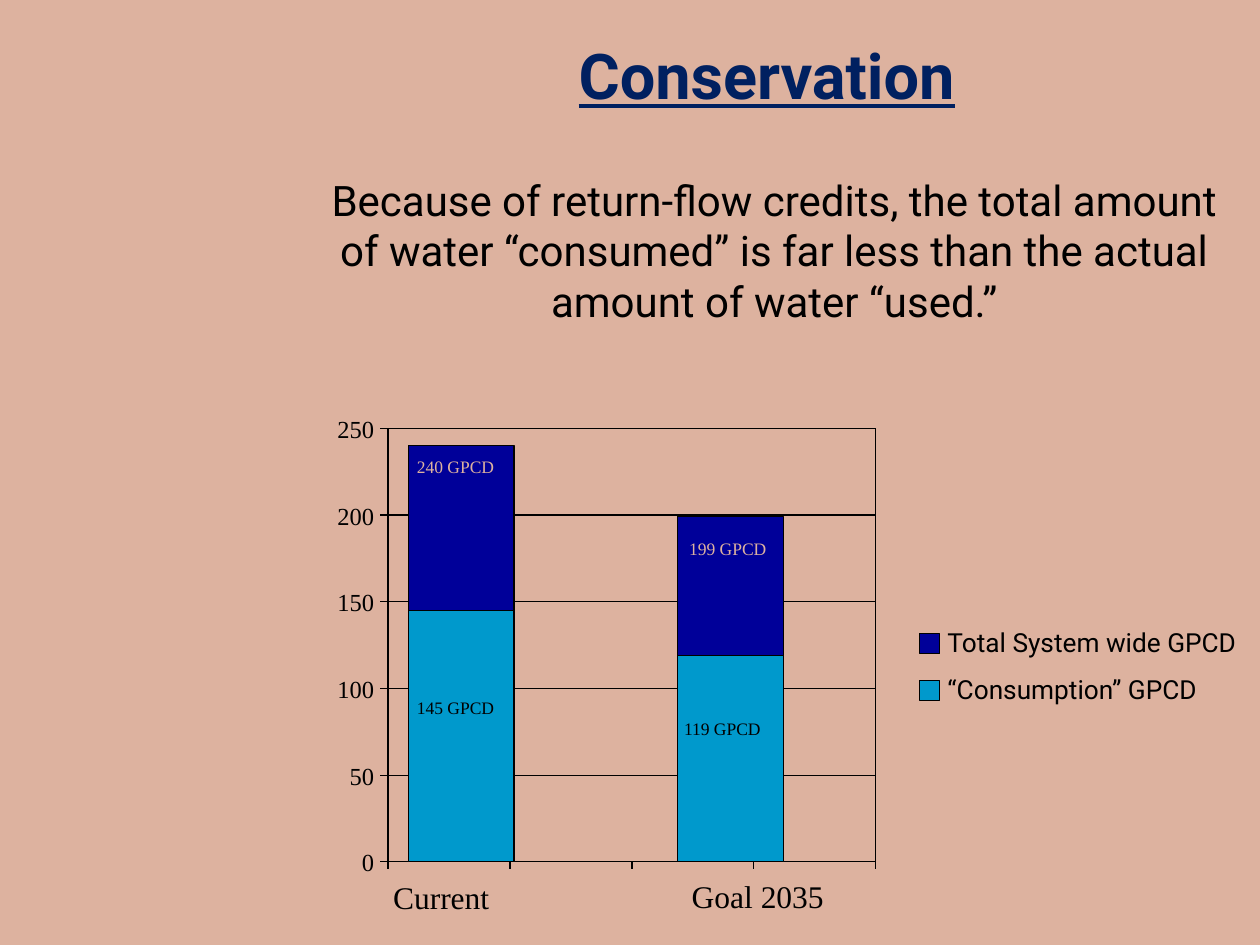
import lxml.etree
import pptx
import pptx.dml.color
import pptx.enum.shapes
import pptx.enum.text
import pptx.oxml.ns
import pptx.util

RGBColor = pptx.dml.color.RGBColor
ALIGN = pptx.enum.text.PP_ALIGN
SAND = RGBColor(0xDD, 0xB2, 0x9F)
NAVY = RGBColor(0x00, 0x20, 0x60)
DARK_BLUE = RGBColor(0x00, 0x00, 0x99)
LIGHT_BLUE = RGBColor(0x00, 0x99, 0xCC)
BLACK = RGBColor(0, 0, 0)
SANS = "Roboto"
SERIF = "Times New Roman"

# Lengths are in cells of a 100 by 75 grid.
CELL = pptx.util.Inches(0.1)
PLOT_LEFT, PLOT_TOP, PLOT_WIDTH, PLOT_HEIGHT = 30.8, 34, 38.7, 34.4
PLOT_RIGHT = PLOT_LEFT + PLOT_WIDTH
BASELINE = PLOT_TOP + PLOT_HEIGHT
AXIS_MAXIMUM = 250
AXIS_STEP = 50
CATEGORY_TICKS = 4
TICK = 0.6
BAR_WIDTH = 8.4
SWATCH = 1.6

# Bar left edge, value, fill, label colour, label left and top.
BARS = [
    (32.4, 240, DARK_BLUE, SAND, 33.1, 36.2),
    (32.4, 145, LIGHT_BLUE, BLACK, 33.1, 55.3),
    (53.8, 199, DARK_BLUE, SAND, 54.7, 42.7),
    (53.8, 119, LIGHT_BLUE, BLACK, 54.3, 57),
]
CATEGORIES = [("Current", 31.2, 69.7, 9), ("Goal 2035", 54.9, 69.6, 11)]
LEGEND = [
    ("Total System wide GPCD", DARK_BLUE, 50.3),
    ("“Consumption” GPCD", LIGHT_BLUE, 54),
]


def grid(*cells):
    return [round(count * CELL) for count in cells]


def height_of(value):
    return value / AXIS_MAXIMUM * PLOT_HEIGHT


def add_run(paragraph, text, size, font_name, color):
    run = paragraph.add_run()
    run.text = text
    run.font.size = pptx.util.Pt(size)
    run.font.name = font_name
    run.font.color.rgb = color
    return run


def add_title(slide, text):
    title = slide.shapes.title
    title.left, title.top, title.width, title.height = grid(21.7, 1.7, 78.3, 9.2)
    title.text_frame.vertical_anchor = pptx.enum.text.MSO_ANCHOR.MIDDLE
    paragraph = title.text_frame.paragraphs[0]
    paragraph.alignment = ALIGN.CENTER
    paragraph.line_spacing = 0.9
    run = add_run(paragraph, text, 36, SANS, NAVY)
    run.font.bold = True
    run.font.underline = True


def add_statement(slide, text):
    frame = slide.shapes.add_textbox(*grid(20.8, 13.35, 77.5, 13.1)).text_frame
    frame.word_wrap = True
    paragraph = frame.paragraphs[0]
    paragraph.alignment = ALIGN.CENTER
    paragraph._p.get_or_add_pPr().set("marL", str(pptx.util.Inches(0.38)))
    add_run(paragraph, text, 24, SANS, BLACK)


def add_label(shapes, text, area, size, font_name=SERIF, color=BLACK, alignment=ALIGN.LEFT):
    """Add one unwrapped line of text in a box without margins."""
    frame = shapes.add_textbox(*grid(*area)).text_frame
    frame.margin_left = frame.margin_top = frame.margin_right = frame.margin_bottom = 0
    frame.word_wrap = False
    paragraph = frame.paragraphs[0]
    paragraph.alignment = alignment
    add_run(paragraph, text, size, font_name, color)


def add_line(shapes, *ends):
    line = shapes.add_connector(pptx.enum.shapes.MSO_CONNECTOR.STRAIGHT, *grid(*ends))
    line.line.color.rgb = BLACK
    line.line.width = pptx.util.Pt(0.75)
    lxml.etree.SubElement(line._element.spPr, pptx.oxml.ns.qn("a:effectLst"))


def add_box(shapes, area, fill=None):
    box = shapes.add_shape(pptx.enum.shapes.MSO_SHAPE.RECTANGLE, *grid(*area))
    box.shadow.inherit = False
    if fill is None:
        box.fill.background()
    else:
        box.fill.solid()
        box.fill.fore_color.rgb = fill
    box.line.color.rgb = BLACK
    box.line.width = pptx.util.Pt(0.75)


def add_value_axis(shapes):
    for value in range(0, AXIS_MAXIMUM + 1, AXIS_STEP):
        y = BASELINE - height_of(value)
        add_line(shapes, PLOT_LEFT, y, PLOT_RIGHT, y)
        add_line(shapes, PLOT_LEFT, y, PLOT_LEFT - TICK, y)
        add_label(shapes, str(value), (26.5, y - 1.15, 3.2, 2.3), 14, alignment=ALIGN.RIGHT)
    add_line(shapes, PLOT_LEFT, BASELINE, PLOT_LEFT, PLOT_TOP)


def add_category_axis(shapes):
    add_line(shapes, PLOT_LEFT, BASELINE, PLOT_RIGHT, BASELINE)
    for tick in range(CATEGORY_TICKS + 1):
        x = PLOT_LEFT + tick * PLOT_WIDTH / CATEGORY_TICKS
        add_line(shapes, x, BASELINE, x, BASELINE + TICK)
    for name, left, top, width in CATEGORIES:
        add_label(shapes, name, (left, top, width, 3), 18)


def add_bars(shapes):
    for left, value, fill, label_color, label_left, label_top in BARS:
        height = height_of(value)
        add_box(shapes, (left, BASELINE - height, BAR_WIDTH, height), fill)
        add_label(shapes, f"{value} GPCD", (label_left, label_top, 6.7, 1.7), 10,
                  color=label_color)


def add_legend(shapes):
    for name, fill, top in LEGEND:
        add_box(shapes, (73, top, SWATCH, SWATCH), fill)
        add_label(shapes, name, (75.2, top - 0.6, 23.6, 2.5), 15, SANS)


def add_usage_graph(slide):
    shapes = slide.shapes.add_group_shape().shapes
    add_box(shapes, (PLOT_LEFT, PLOT_TOP, PLOT_WIDTH, PLOT_HEIGHT))
    add_value_axis(shapes)
    add_category_axis(shapes)
    add_bars(shapes)
    add_legend(shapes)


def main():
    presentation = pptx.Presentation()
    presentation.slide_width, presentation.slide_height = grid(100, 75)
    slide = presentation.slides.add_slide(presentation.slide_layouts[5])
    slide.background.fill.solid()
    slide.background.fill.fore_color.rgb = SAND
    add_usage_graph(slide)
    add_statement(slide, "Because of return-flow credits, the total amount of water "
                         "“consumed” is far less than the actual amount of water “used.”")
    add_title(slide, "Conservation")
    presentation.save("out.pptx")


if __name__ == "__main__":
    main()
